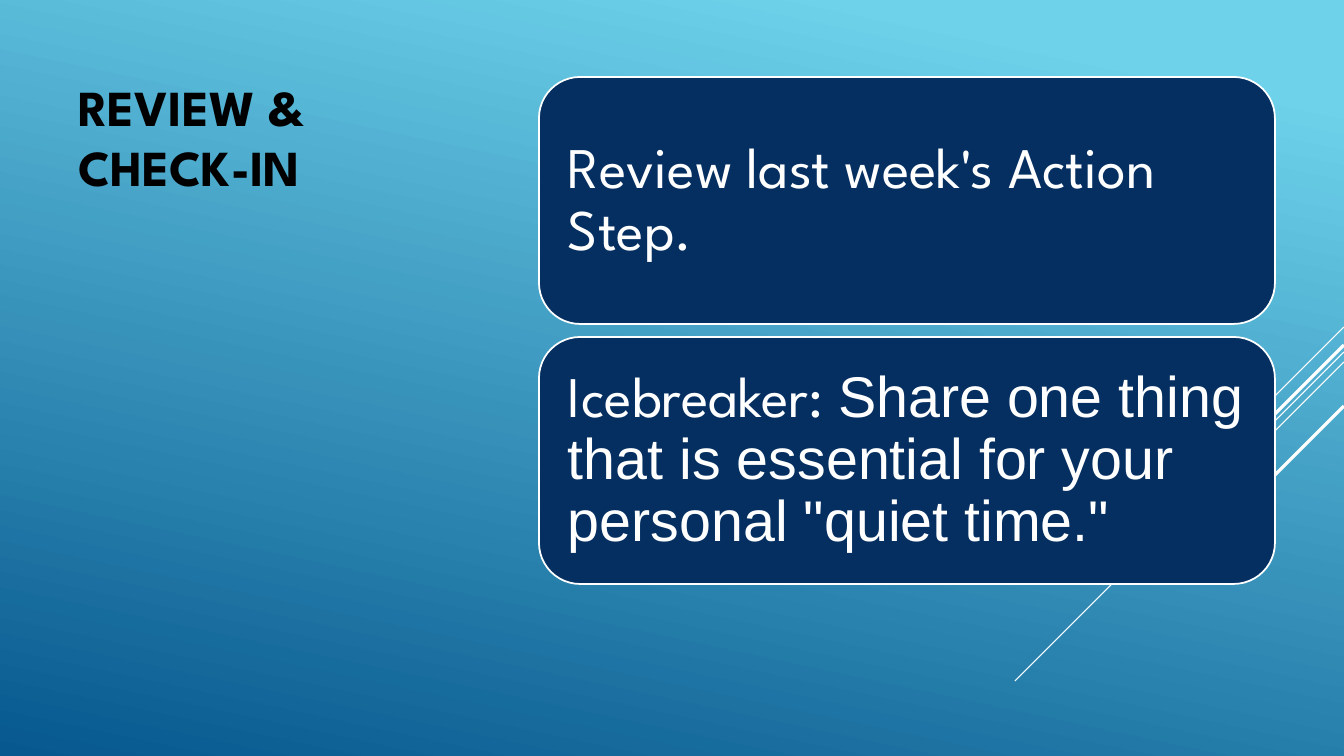
"""Build the Review & Check-In slide."""
from lxml.etree import SubElement
from pptx import Presentation
from pptx.dml.color import RGBColor
from pptx.enum.shapes import MSO_CONNECTOR, MSO_SHAPE
from pptx.enum.text import MSO_ANCHOR, PP_ALIGN
from pptx.oxml.ns import qn
from pptx.util import Emu, Pt

SKY = RGBColor(0x6E, 0xD2, 0xEB)
OCEAN = RGBColor(0x06, 0x58, 0x8E)
NAVY = RGBColor(0x05, 0x2F, 0x61)
WHITE = RGBColor(0xFF, 0xFF, 0xFF)
BLACK = RGBColor(0x00, 0x00, 0x00)
HEAD_FONT = "League Spartan"
BODY_FONT = "Arial"
WIDTH, HEIGHT = 1344, 756


def px(n):
    return Emu(round(n * 12192000 / WIDTH))


def style_run(r, font, size, color, bold=False):
    r.font.name = font
    r.font.size = Pt(size)
    r.font.color.rgb = color
    r.font.bold = bold


prs = Presentation()
prs.slide_width, prs.slide_height = px(WIDTH), px(HEIGHT)
s = prs.slides.add_slide(prs.slide_layouts[5])

fill = s.background.fill
fill.gradient()
fill.gradient_angle = 360 - 102
for stop, color, position in zip(fill.gradient_stops, (SKY, OCEAN), (0.1, 1)):
    stop.color.rgb = color
    stop.position = position

for top, run, weight in [(327, 101, 0.75), (352, 329, 0.75), (362, 209, 0.75),
                         (345, 192, 2.25), (406, 140, 2.25)]:
    line = s.shapes.add_connector(MSO_CONNECTOR.STRAIGHT, px(WIDTH), px(top),
                                  px(WIDTH - run), px(top + run))
    line.line.color.rgb = WHITE
    line.line.width = Pt(weight)
    SubElement(line._element.spPr, qn("a:effectLst"))

title = s.shapes.title
title.left, title.top, title.width, title.height = px(68), px(71), px(340), px(443)
tf = title.text_frame
tf.text = "REVIEW & CHECK-IN"
tf.word_wrap = True
tf.vertical_anchor = MSO_ANCHOR.TOP
p = tf.paragraphs[0]
p.alignment = PP_ALIGN.LEFT
style_run(p.runs[0], HEAD_FONT, 36, BLACK, True)

cards = [
    [("Review last week's Action Step.", HEAD_FONT)],
    [("Icebreaker: ", HEAD_FONT),
     ('Share one thing that is essential for your personal "quiet time."', BODY_FONT)],
]
for i, parts in enumerate(cards):
    sp = s.shapes.add_shape(MSO_SHAPE.ROUNDED_RECTANGLE, px(539), px(77 + 260 * i),
                            px(736), px(247))
    sp.shadow.inherit = False
    sp.fill.solid()
    sp.fill.fore_color.rgb = NAVY
    sp.line.color.rgb = WHITE
    sp.line.width = Pt(1.25)
    tf = sp.text_frame
    tf.word_wrap = True
    tf.vertical_anchor = MSO_ANCHOR.MIDDLE
    tf.margin_left = tf.margin_right = tf.margin_top = tf.margin_bottom = px(17)
    p = tf.paragraphs[0]
    p.alignment = PP_ALIGN.LEFT
    p.line_spacing = 0.9
    for text, font in parts:
        r = p.add_run()
        r.text = text
        style_run(r, font, 41, WHITE)

prs.save("out.pptx")
